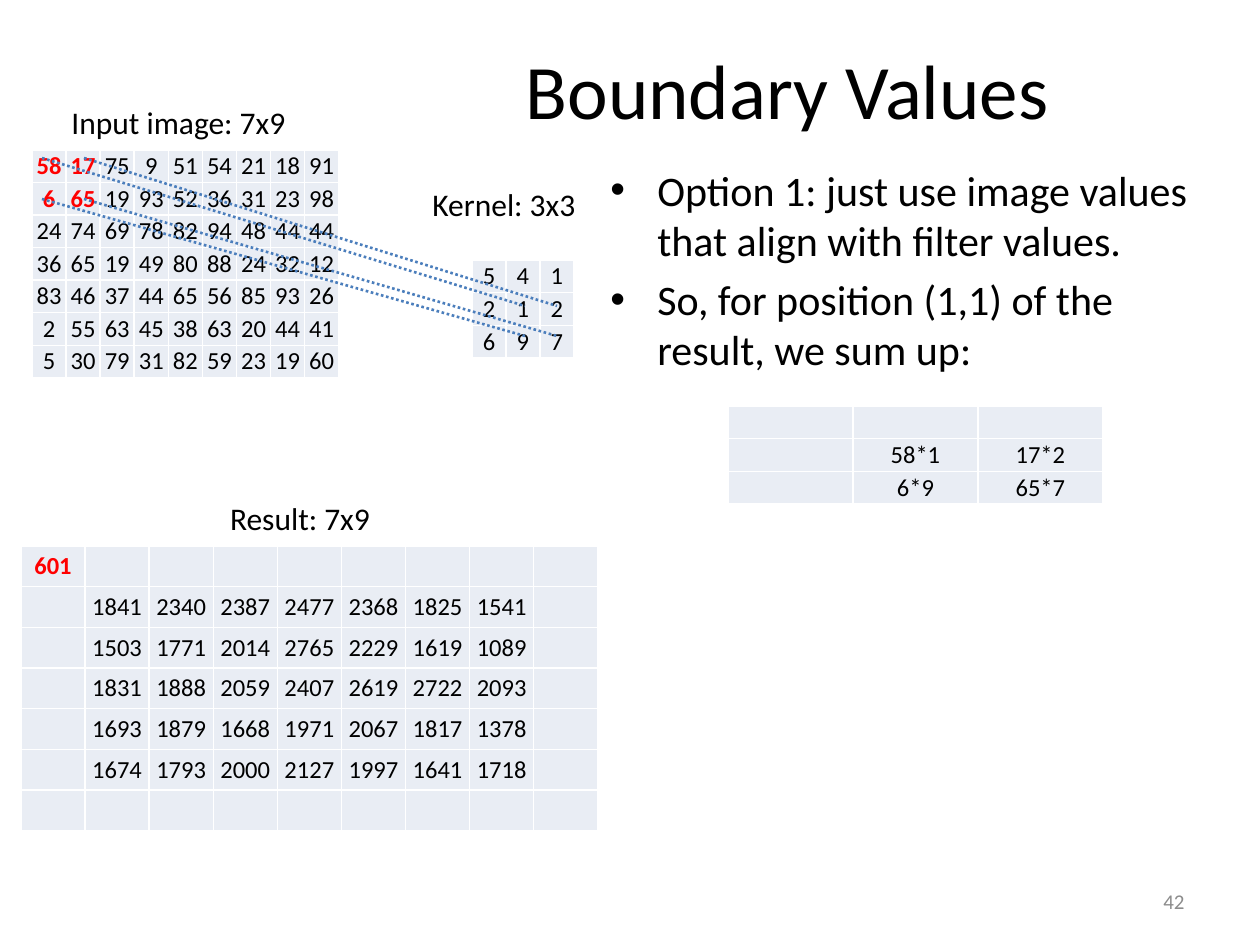
from itertools import product

from lxml.etree import SubElement
from pptx import Presentation
from pptx.dml.color import RGBColor as RGB
from pptx.enum.dml import MSO_LINE as Dash
from pptx.enum.shapes import MSO_CONNECTOR as Conn
from pptx.enum.text import MSO_ANCHOR as Anchor, MSO_AUTO_SIZE as Auto, PP_ALIGN as Align
from pptx.oxml.ns import qn
from pptx.util import Emu, Pt

PX = 914400 / 126
FONT = "Calibri"
COLORS = {"text": "000000", "mark": "FF0000", "cell": "E9EDF4",
          "edge": "FFFFFF", "link": "4B7EBC", "page": "8C8C8C"}

IMAGE = [
    "58 17 75 9 51 54 21 18 91",
    "6 65 19 93 52 36 31 23 98",
    "24 74 69 78 82 94 48 44 44",
    "36 65 19 49 80 88 24 32 12",
    "83 46 37 44 65 56 85 93 26",
    "2 55 63 45 38 63 20 44 41",
    "5 30 79 31 82 59 23 19 60",
]
KERNEL = ["5 4 1", "2 1 2", "6 9 7"]
INNER = [
    "1841 2340 2387 2477 2368 1825 1541",
    "1503 1771 2014 2765 2229 1619 1089",
    "1831 1888 2059 2407 2619 2722 2093",
    "1693 1879 1668 1971 2067 1817 1378",
    "1674 1793 2000 2127 1997 1641 1718",
]
SUMS = [[""] * 3, ["", "58*1", "17*2"], ["", "6*9", "65*7"]]
POINTS = ["Option 1: just use image values that align with filter values.",
          "So, for position (1,1) of the result, we sum up:"]


def px(n):
    return Emu(round(n * PX))


def color(name):
    return RGB.from_string(COLORS[name])


def split(rows):
    return [row.split() for row in rows]


def add_run(para, text, size, tint="text", bold=False):
    run = para.add_run()
    run.text = text
    font = run.font
    font.name, font.size, font.bold = FONT, Pt(size), bold
    font.color.rgb = color(tint)


def add_box(slide, box):
    return slide.shapes.add_textbox(*map(px, box)).text_frame


def add_title(slide, box, text):
    title = slide.shapes.title
    title.left, title.top, title.width, title.height = map(px, box)
    frame = title.text_frame
    frame.vertical_anchor = Anchor.MIDDLE
    para = frame.paragraphs[0]
    para.alignment = Align.CENTER
    add_run(para, text, 44)


def add_points(slide, box, points):
    frame = add_box(slide, box)
    frame.word_wrap = True
    for i, text in enumerate(points):
        para = frame.add_paragraph() if i else frame.paragraphs[0]
        para.space_before = Pt(4.8)
        props = para._p.get_or_add_pPr()
        props.set("marL", str(px(47)))
        props.set("indent", str(-px(47)))
        SubElement(props, qn("a:buFont"), typeface="Arial")
        SubElement(props, qn("a:buChar"), char="•")
        add_run(para, text, 24)


def add_label(slide, box, text, align=Align.CENTER):
    frame = add_box(slide, box)
    frame.word_wrap = False
    frame.auto_size = Auto.SHAPE_TO_FIT_TEXT
    frame.paragraphs[0].alignment = align
    add_run(frame.paragraphs[0], text, 18)


def add_page(slide, box, text):
    frame = add_box(slide, box)
    frame.word_wrap = True
    frame.vertical_anchor = Anchor.MIDDLE
    frame.paragraphs[0].alignment = Align.RIGHT
    add_run(frame.paragraphs[0], text, 12, "page")


def style_cell(cell):
    props = cell._tc.get_or_add_tcPr()
    for side in ("lnL", "lnR", "lnT", "lnB"):
        line = SubElement(props, qn(f"a:{side}"), w=str(Pt(1)))
        fill = SubElement(line, qn("a:solidFill"))
        SubElement(fill, qn("a:srgbClr"), val=COLORS["edge"])
    cell.fill.solid()
    cell.fill.fore_color.rgb = color("cell")
    cell.margin_left = cell.margin_right = cell.margin_top = cell.margin_bottom = 0
    cell.vertical_anchor = Anchor.MIDDLE


def add_grid(slide, box, rows, marks=()):
    """Table of equal cells; the (row, column) pairs in marks are bold red."""
    high, wide = len(rows), len(rows[0])
    table = slide.shapes.add_table(high, wide, *map(px, box)).table
    table.first_row = table.horz_banding = False
    for col in table.columns:
        col.width = px(box[2] / wide)
    for row in table.rows:
        row.height = px(box[3] / high)
    for r, c in product(range(high), range(wide)):
        cell = table.cell(r, c)
        style_cell(cell)
        para = cell.text_frame.paragraphs[0]
        para.alignment = Align.CENTER
        if rows[r][c]:
            hit = (r, c) in marks
            add_run(para, rows[r][c], 14, "mark" if hit else "text", hit)
        else:
            SubElement(para._p, qn("a:endParaRPr"), sz="1400")


def add_links(slide, starts, ends):
    """Dotted lines from each start (x, y) to the end in the same place."""
    for start, end in zip(starts, ends):
        link = slide.shapes.add_connector(Conn.STRAIGHT, *map(px, start + end))
        link.line.color.rgb = color("link")
        link.line.width = Pt(1.5)
        link.line.dash_style = Dash.ROUND_DOT
        SubElement(link._element.spPr, qn("a:effectLst"))


def main():
    deck = Presentation()
    deck.slide_width, deck.slide_height = px(1260), px(945)
    slide = deck.slides.add_slide(deck.slide_layouts.get_by_name("Title Only"))

    add_title(slide, (378, 21, 819, 136), "Boundary Values")
    add_points(slide, (598, 158, 640, 714), POINTS)
    add_page(slide, (903, 876, 294, 50), "42")

    blank = [""] * 9
    inner = [["", *row, ""] for row in split(INNER)]
    result = [["601", *blank[1:]], *inner, blank]
    add_grid(slide, (21, 546, 577, 285), result, [(0, 0)])
    add_label(slide, (208, 493, 184, 50), "Result: 7x9")

    add_grid(slide, (32, 150, 307, 228), split(IMAGE), list(product(range(2), repeat=2)))
    add_grid(slide, (472, 260, 102, 98), split(KERNEL))
    add_label(slide, (48, 97, 261, 50), "Input image: 7x9")
    add_label(slide, (420, 179, 170, 50), "Kernel: 3x3", Align.LEFT)
    add_links(slide, product((84, 42), (158, 199)), product((557, 525), (306, 336)))

    add_grid(slide, (728, 406, 375, 98), SUMS)
    deck.save("out.pptx")


if __name__ == "__main__":
    main()
